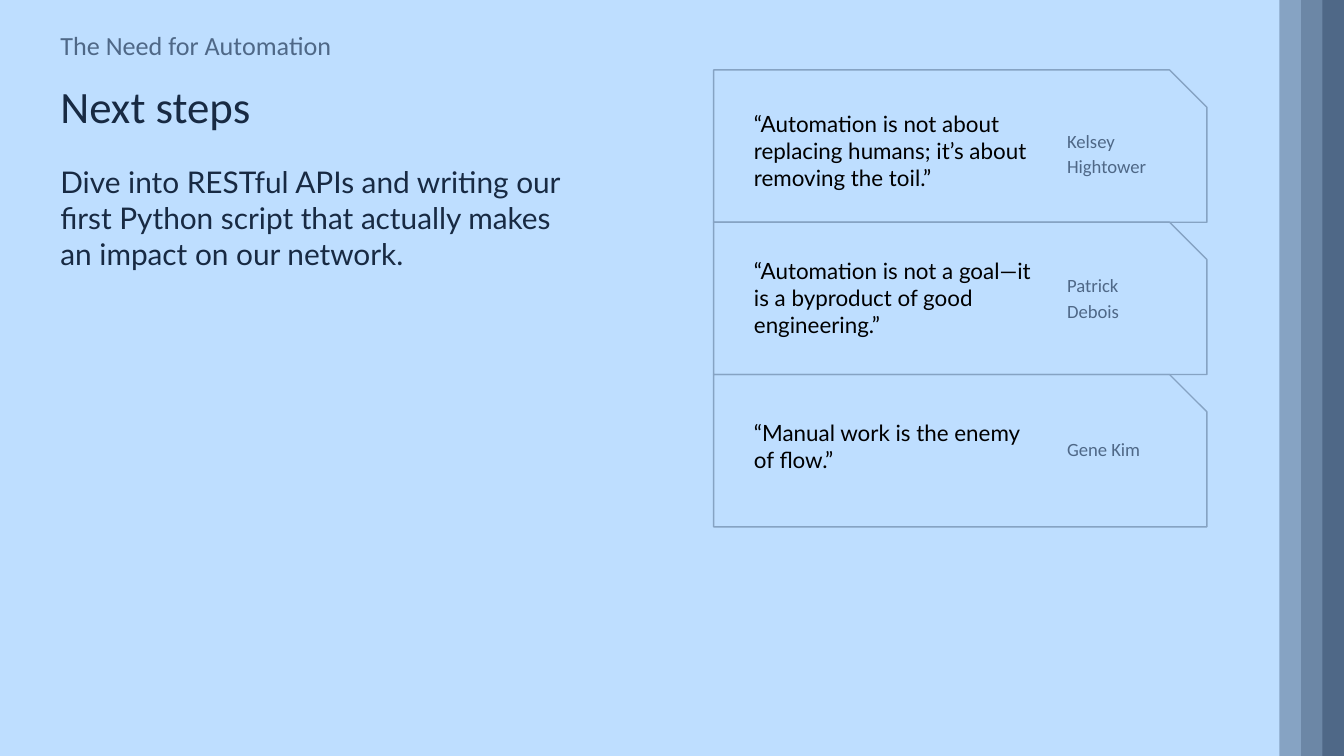
from pptx import Presentation
from pptx.dml.color import RGBColor
from pptx.enum.shapes import MSO_SHAPE
from pptx.enum.text import MSO_ANCHOR, MSO_AUTO_SIZE, PP_ALIGN
from pptx.util import Inches, Pt

# Content
TITLE = "Next steps"
SECTION = "The Need for Automation"
BODY = ("Dive into RESTful APIs and writing our first Python script "
        "that actually makes an impact on our network.")
# quote, author, quote offset, author offset and quote height within the card
QUOTES = [
    ("“Automation is not about replacing humans; it’s about removing the toil.”",
     "Kelsey Hightower", 0.3, 0.4, 0.63),
    ("“Automation is not a goal—it is a byproduct of good engineering.”",
     "Patrick Debois", 0.26, 0.34, 0.63),
    ("“Manual work is the enemy of flow.”",
     "Gene Kim", 0.33, 0.33, 0.42),
]

THEME = {
    "edge": "4F6887",
    # colour, left, right
    "bands": [("6C87A6", 0.47, 9.84), ("86A3C3", 0.47, 9.68), ("BEDEFF", 0, 9.52)],
    "outline": "86A3C3",
    # font, size, colour
    "title": ("Calibri", 24, "182A43"),
    "body": ("Lato", 16, "182A43"),
    "quote": ("Lato", 12, "000000"),
    "author": ("Calibri", 10, "4F6887"),
    "section": ("Calibri", 14, "4F6887"),
}
SLIDE_W = 10
SLIDE_H = SLIDE_W * 9 / 16
MARGIN = 0.45
CARD_X, CARD_Y, CARD_W = 5.31, 0.52, 3.67
CARD_H = 3.4 / len(QUOTES)


def write(shape, text, style, box, spacing=None, anchor=MSO_ANCHOR.TOP):
    font, size, color = THEME[style]
    shape.left, shape.top, shape.width, shape.height = map(Inches, box)
    tf = shape.text_frame
    tf.text = text
    tf.word_wrap = True
    tf.auto_size = MSO_AUTO_SIZE.NONE
    tf.vertical_anchor = anchor
    tf.margin_left = tf.margin_top = tf.margin_bottom = 0
    tf.margin_right = Inches(0.1)
    p = tf.paragraphs[0]
    p.alignment = PP_ALIGN.LEFT
    if spacing:
        p.line_spacing = spacing
    r = p.runs[0]
    r.font.name, r.font.size = font, Pt(size)
    r.font.color.rgb = RGBColor.from_string(color)


def add_text(s, text, style, box, **options):
    tb = s.shapes.add_textbox(*map(Inches, box))
    write(tb, text, style, box, **options)


def add_band(s, color, left, right):
    band = s.shapes.add_shape(MSO_SHAPE.RECTANGLE,
                              *map(Inches, (left, 0, right - left, SLIDE_H)))
    band.shadow.inherit = False
    band.fill.solid()
    band.fill.fore_color.rgb = RGBColor.from_string(color)
    band.line.fill.background()


def add_card(s, y):
    card = s.shapes.add_shape(MSO_SHAPE.SNIP_1_RECTANGLE,
                              *map(Inches, (CARD_X, y, CARD_W, CARD_H)))
    card.adjustments[0] = 0.245
    card.shadow.inherit = False
    card.fill.background()
    card.line.color.rgb = RGBColor.from_string(THEME["outline"])
    card.line.width = Pt(0.75)


def main():
    prs = Presentation()
    prs.slide_width, prs.slide_height = Inches(SLIDE_W), Inches(SLIDE_H)
    s = prs.slides.add_slide(prs.slide_layouts[5])

    # Background with stepped bands at the right edge
    s.background.fill.solid()
    s.background.fill.fore_color.rgb = RGBColor.from_string(THEME["edge"])
    for color, left, right in THEME["bands"]:
        add_band(s, color, left, right)

    # Title, brought in front of the bands
    title = s.shapes.title
    write(title, TITLE, "title", (MARGIN, 0.63, 4.39, 0.48), spacing=0.9)
    title.element.getparent().append(title.element)

    # Section name and body
    add_text(s, SECTION, "section", (MARGIN, 0.22, 5.84, 0.29))
    add_text(s, BODY, "body", (MARGIN, 1.22, 3.84, 1.19))

    # Stacked quote cards
    for i, (quote, author, quote_dy, author_dy, quote_h) in enumerate(QUOTES):
        y = CARD_Y + i * CARD_H
        add_card(s, y)
        add_text(s, quote, "quote", (CARD_X + 0.3, y + quote_dy, 2.22, quote_h))
        add_text(s, author, "author", (CARD_X + 2.63, y + author_dy, 0.89, 0.42),
                 spacing=1.15, anchor=MSO_ANCHOR.MIDDLE)

    prs.save("out.pptx")


if __name__ == "__main__":
    main()
